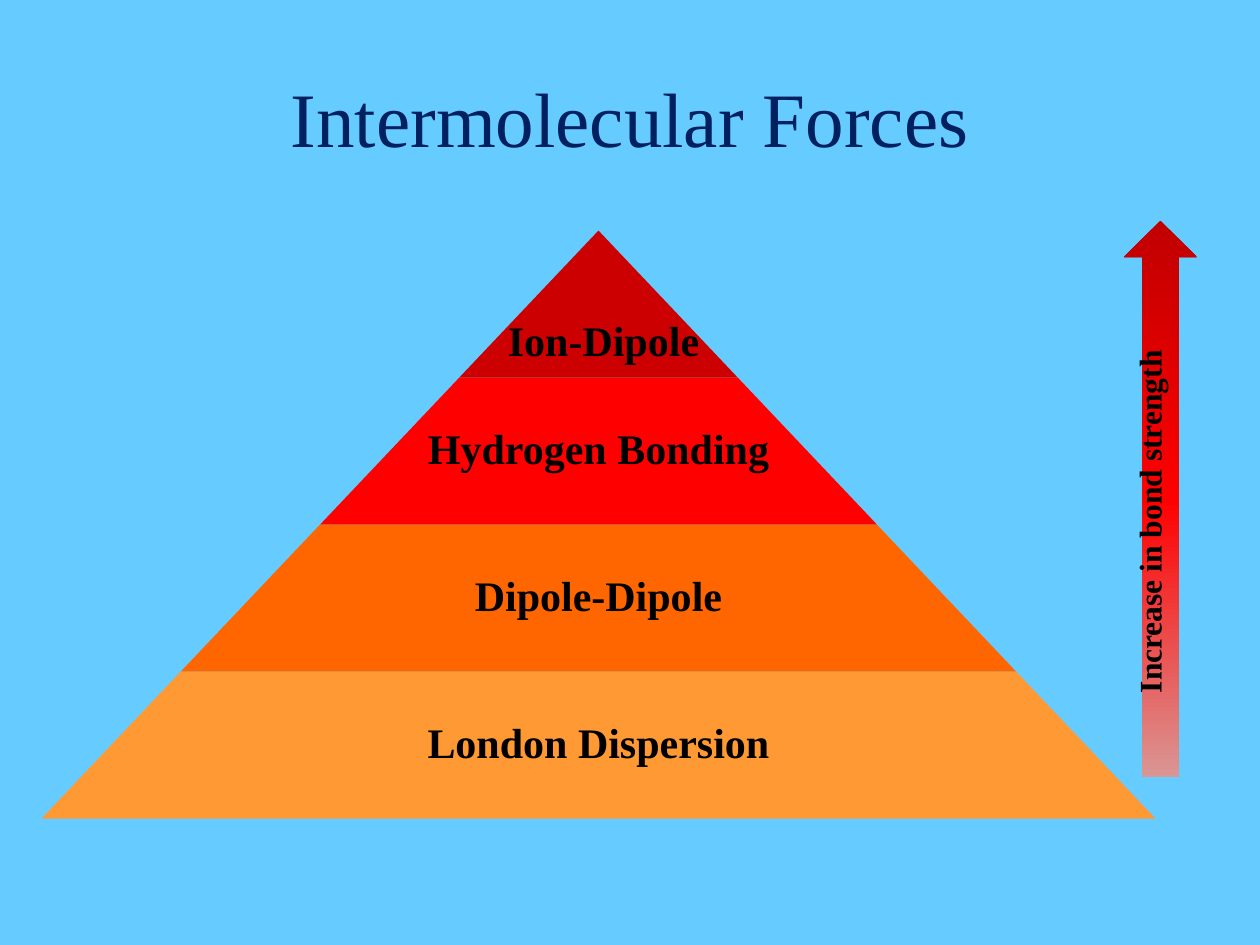
from copy import deepcopy
from dataclasses import dataclass

from pptx import Presentation
from pptx.dml.color import RGBColor
from pptx.enum.shapes import MSO_SHAPE
from pptx.enum.text import MSO_ANCHOR, MSO_AUTO_SIZE, PP_ALIGN
from pptx.oxml.ns import qn
from pptx.util import Inches, Pt

UP_ARROW = MSO_SHAPE.UP_ARROW
MIDDLE, TOP = MSO_ANCHOR.MIDDLE, MSO_ANCHOR.TOP
CENTER, LEFT = PP_ALIGN.CENTER, PP_ALIGN.LEFT
FIT_SHAPE = MSO_AUTO_SIZE.SHAPE_TO_FIT_TEXT


@dataclass(frozen=True)
class Theme:
    font: str = "Times New Roman"
    background: str = "66CCFF"
    title: str = "002060"
    text: str = "000000"
    arrow: tuple = ("C00000", "FF0000", "D99694")
    title_size: int = 44
    band_size: int = 24
    arrow_size: int = 18


THEME = Theme()

BANDS = [
    ("Ion-Dipole", "CC0000"),
    ("Hydrogen Bonding", "FF0000"),
    ("Dipole-Dipole", "FF6600"),
    ("London Dispersion", "FF9933"),
]
APEX_X, APEX_Y = 4.75, 1.83
BAND_HEIGHT = 3.5 / 3
HALF_STEP = 4.42 / len(BANDS)  # growth of the half width per band


def write(tf, text, size, color=THEME.text, bold=False, align=CENTER,
          anchor=MIDDLE, wrap=True, spacing=None):
    tf.word_wrap = wrap
    tf.vertical_anchor = anchor
    p = tf.paragraphs[0]
    p.alignment = align
    if spacing:
        p.line_spacing = spacing
    r = p.add_run()
    r.text = text
    r.font.name = THEME.font
    r.font.size = Pt(size)
    r.font.bold = bold
    r.font.color.rgb = RGBColor.from_string(color)


def set_insets(tf, left, top, right, bottom):
    tf.margin_left, tf.margin_top = Inches(left), Inches(top)
    tf.margin_right, tf.margin_bottom = Inches(right), Inches(bottom)


def add_textbox(s, left, top, width, height):
    return s.shapes.add_textbox(Inches(left), Inches(top),
                                Inches(width), Inches(height))


def add_band(s, index, text, color):
    """Add one pyramid level, counted from the apex."""
    top = APEX_Y + index * BAND_HEIGHT
    bottom = top + BAND_HEIGHT
    upper, lower = index * HALF_STEP, (index + 1) * HALF_STEP
    corners = [(APEX_X - upper, top), (APEX_X + upper, top),
               (APEX_X + lower, bottom), (APEX_X - lower, bottom)]
    points = [(Inches(x), Inches(y)) for x, y in corners]
    builder = s.shapes.build_freeform(*points[0])
    builder.add_line_segments(points[1:], close=True)
    sp = builder.convert_to_shape()
    sp.shadow.inherit = False
    sp.fill.solid()
    sp.fill.fore_color.rgb = RGBColor.from_string(color)
    sp.line.fill.background()
    tf = sp.text_frame
    if index == 0:
        set_insets(tf, 0.11, 0.64, 0.03, 0.03)  # label low in the tip
    else:
        side = 0.4 * (index + 1)
        set_insets(tf, side, 0.03, side, 0.03)
    write(tf, text, THEME.band_size, bold=True, spacing=0.9)


def add_strength_arrow(s):
    sp = s.shapes.add_shape(UP_ARROW, Inches(8.92), Inches(1.75),
                            Inches(0.58), Inches(4.42))
    sp.shadow.inherit = False
    sp.line.fill.background()
    sp.fill.gradient()
    sp.fill.gradient_angle = 270
    stops = sp._element.spPr.find(".//" + qn("a:gsLst"))
    stops.insert(1, deepcopy(stops[0]))
    for i, (stop, color) in enumerate(zip(sp.fill.gradient_stops, THEME.arrow)):
        stop.position = i / 2
        stop.color.rgb = RGBColor.from_string(color)

    tf = add_textbox(s, 8.92, 2.75, 0.5, 2.85).text_frame
    write(tf, "Increase in bond strength", THEME.arrow_size, bold=True,
          align=LEFT, anchor=TOP, wrap=False)
    tf.auto_size = FIT_SHAPE
    tf._txBody.bodyPr.set("vert", "vert270")


def main():
    prs = Presentation()
    prs.slide_width, prs.slide_height = Inches(10), Inches(7.5)
    s = prs.slides.add_slide(prs.slide_layouts[6])
    s.background.fill.solid()
    s.background.fill.fore_color.rgb = RGBColor.from_string(THEME.background)

    for index, (text, color) in enumerate(BANDS):
        add_band(s, index, text, color)
    title = add_textbox(s, 0.5, 0.3, 9, 1.25)
    write(title.text_frame, "Intermolecular Forces", THEME.title_size,
          color=THEME.title)
    add_strength_arrow(s)
    prs.save("out.pptx")


if __name__ == "__main__":
    main()
